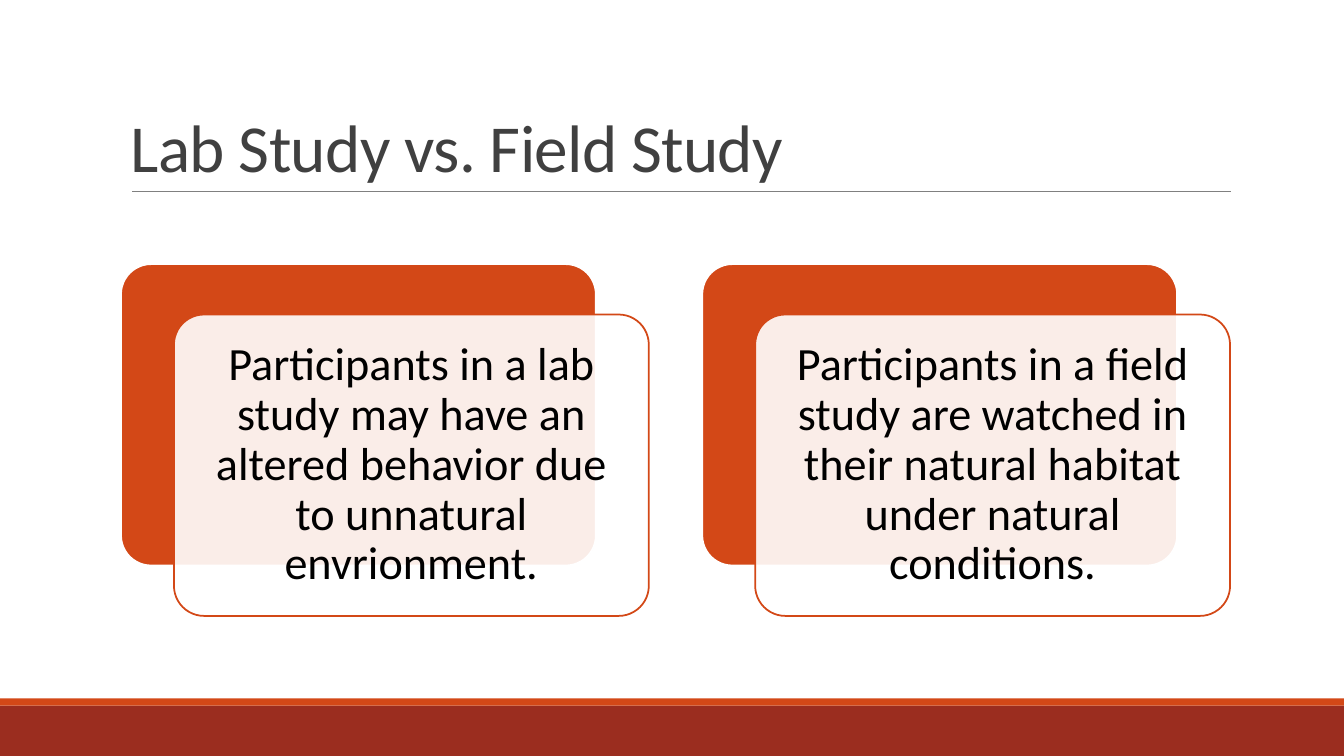
from lxml import etree
from pptx import Presentation
from pptx.dml.color import RGBColor
from pptx.enum.shapes import MSO_CONNECTOR, MSO_SHAPE
from pptx.enum.text import MSO_ANCHOR, PP_ALIGN
from pptx.oxml.ns import qn
from pptx.util import Inches, Pt

FONT = "Calibri"
ORANGE, RED, WHITE = "D34817", "9B2D1F", "FFFFFF"
CARD_WIDTH, CARD_HEIGHT = 4.71, 2.99
CARD_PITCH = 5.765
FRONT_SHIFT_X, FRONT_SHIFT_Y = 0.525, 0.5
STATEMENTS = [
    "Participants in a lab study may have an altered behavior due to unnatural envrionment.",
    "Participants in a field study are watched in their natural habitat under natural conditions.",
]


def color(value):
    return RGBColor.from_string(value)


def add_box(slide, kind, left, top, width, height, fill, line=None):
    shape = slide.shapes.add_shape(
        kind, Inches(left), Inches(top), Inches(width), Inches(height))
    shape.shadow.inherit = False
    shape.fill.solid()
    shape.fill.fore_color.rgb = color(fill)
    if line:
        shape.line.color.rgb = color(line)
        shape.line.width = Pt(1.25)
    else:
        shape.line.fill.background()
    return shape


def write(shape, text, size, text_color, spacing):
    shape.text_frame.word_wrap = True
    shape.text_frame.text = text
    paragraph = shape.text_frame.paragraphs[0]
    paragraph.line_spacing = spacing
    run = paragraph.runs[0]
    run.font.name = FONT
    run.font.size = Pt(size)
    run.font.color.rgb = color(text_color)
    return paragraph


def add_footer(slide, top, width, height):
    stripe = 0.07
    add_box(slide, MSO_SHAPE.RECTANGLE, 0, top + stripe, width, height - stripe, RED)
    add_box(slide, MSO_SHAPE.RECTANGLE, 0, top, width, stripe, ORANGE)


def add_title(slide, left, top, width, height, text):
    # Rule under the title
    bottom = Inches(top + height)
    rule = slide.shapes.add_connector(
        MSO_CONNECTOR.STRAIGHT, Inches(left + 0.11), bottom,
        Inches(left + width + 0.01), bottom)
    rule.line.color.rgb = color("808080")
    rule.line.width = Pt(0.5)
    etree.SubElement(rule._element.spPr, qn("a:effectLst"))

    # Title text
    title = slide.shapes.add_textbox(
        Inches(left), Inches(top), Inches(width), Inches(height))
    title.text_frame.vertical_anchor = MSO_ANCHOR.BOTTOM
    paragraph = write(title, text, 48, "404040", 0.85)
    paragraph.runs[0].font._element.set("spc", "-50")


def add_card(slide, left, top, text):
    # Solid card behind, translucent card with the text in front
    rounded = MSO_SHAPE.ROUNDED_RECTANGLE
    back = add_box(slide, rounded, left, top, CARD_WIDTH, CARD_HEIGHT, ORANGE, WHITE)
    front = add_box(slide, rounded, left + FRONT_SHIFT_X, top + FRONT_SHIFT_Y,
                    CARD_WIDTH, CARD_HEIGHT, WHITE, ORANGE)
    for shape in (back, front):
        shape.adjustments[0] = 0.1
    fill_color = front._element.spPr.find(qn("a:solidFill"))[0]
    etree.SubElement(fill_color, qn("a:alpha"), val="90000")

    frame = front.text_frame
    frame.margin_left = frame.margin_right = Inches(0.14)
    frame.margin_top = frame.margin_bottom = Inches(0.14)
    frame.vertical_anchor = MSO_ANCHOR.MIDDLE
    write(front, text, 33, "000000", 0.9).alignment = PP_ALIGN.CENTER


def main():
    presentation = Presentation()
    presentation.slide_width = Inches(13.33)
    presentation.slide_height = Inches(7.5)
    slide = presentation.slides.add_slide(presentation.slide_layouts[6])

    add_footer(slide, 6.93, 13.33, 0.57)
    add_title(slide, 1.2, 0.31, 11, 1.59, "Lab Study vs. Field Study")
    for index, statement in enumerate(STATEMENTS):
        add_card(slide, 1.2 + index * CARD_PITCH, 2.62, statement)

    presentation.save("out.pptx")


if __name__ == "__main__":
    main()
